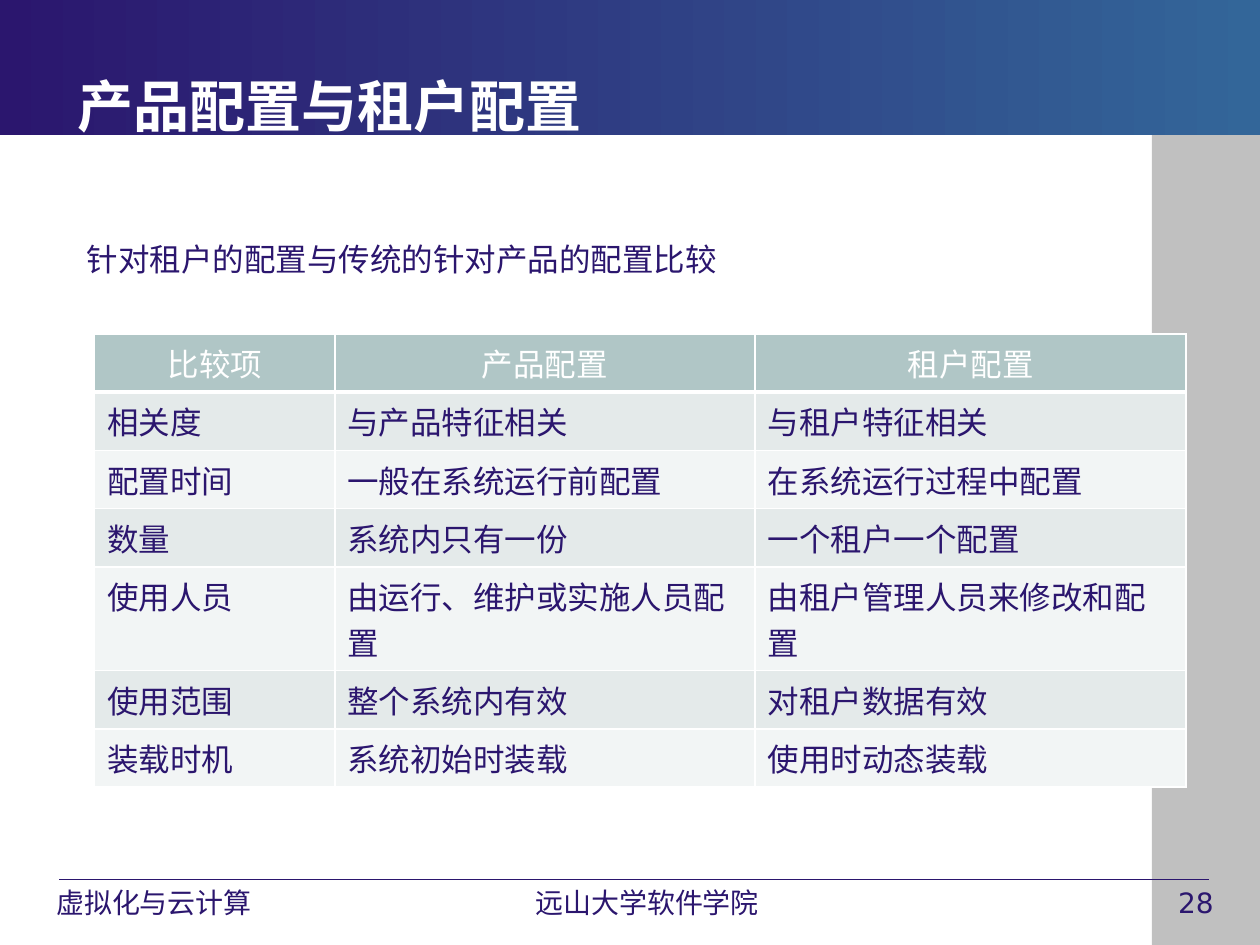
from lxml import etree
from pptx import Presentation
from pptx.dml.color import RGBColor
from pptx.enum import shapes, text
from pptx.oxml import ns
from pptx.util import Cm, Pt

INDIGO = RGBColor(0x2B, 0x16, 0x6E)
BLUE = RGBColor(0x33, 0x66, 0x99)
GRAY = RGBColor(0xC0, 0xC0, 0xC0)
WHITE = RGBColor(0xFF, 0xFF, 0xFF)
TEAL = RGBColor(0xB0, 0xC6, 0xC6)
BANDS = (RGBColor(0xE4, 0xEA, 0xEA), RGBColor(0xF2, 0xF5, 0xF5))

COMPARISON = [
    ("比较项", "产品配置", "租户配置"),
    ("相关度", "与产品特征相关", "与租户特征相关"),
    ("配置时间", "一般在系统运行前配置", "在系统运行过程中配置"),
    ("数量", "系统内只有一份", "一个租户一个配置"),
    ("使用人员", "由运行、维护或实施人员配置", "由租户管理人员来修改和配置"),
    ("使用范围", "整个系统内有效", "对租户数据有效"),
    ("装载时机", "系统初始时装载", "使用时动态装载"),
]
COLUMN_WIDTHS = (4.84, 8.47, 8.69)
ROW_HEIGHT = 1.17
FOOTERS = [
    ("虚拟化与云计算", 0.64, 4.93, text.PP_ALIGN.CENTER),
    ("远山大学软件学院", 10.19, 5.72, text.PP_ALIGN.CENTER),
    ("28", 23.5, 1.8, text.PP_ALIGN.LEFT),
]


def write(frame, words, size=18, font="Arial", color=INDIGO, bold=False,
          align=text.PP_ALIGN.LEFT):
    paragraph = frame.paragraphs[0]
    paragraph.alignment = align
    run = paragraph.add_run()
    run.text = words
    run.font.size = Pt(size)
    run.font.name = font
    run.font.color.rgb = color
    run.font.bold = bold


def add_label(slide, words, left, top, width, height, **style):
    frame = slide.shapes.add_textbox(Cm(left), Cm(top), Cm(width), Cm(height)).text_frame
    frame.word_wrap = True
    write(frame, words, **style)


def add_panel(slide, left, top, width, height):
    panel = slide.shapes.add_shape(shapes.MSO_SHAPE.RECTANGLE,
                                   Cm(left), Cm(top), Cm(width), Cm(height))
    panel.shadow.inherit = False
    panel.line.fill.background()
    return panel.fill


def add_backdrop(slide):
    sidebar = add_panel(slide, 23.22, 2.72, 2.18, 16.33)
    sidebar.solid()
    sidebar.fore_color.rgb = GRAY

    banner = add_panel(slide, 0, 0, 25.4, 2.72)
    banner.gradient()
    banner.gradient_angle = 0
    for stop, color in zip(banner.gradient_stops, (INDIGO, BLUE)):
        stop.color.rgb = color


def add_rule(slide, left, right, y):
    rule = slide.shapes.add_connector(shapes.MSO_CONNECTOR.STRAIGHT,
                                      Cm(left), Cm(y), Cm(right), Cm(y))
    rule.line.color.rgb = INDIGO
    rule.line.width = Pt(0.75)
    etree.SubElement(rule.element.spPr, ns.qn("a:effectLst"))


def set_title(slide, words):
    title = slide.shapes.title
    title.left, title.top, title.width, title.height = Cm(1.3), Cm(0.53), Cm(22.86), Cm(3.18)
    frame = title.text_frame
    frame.auto_size = text.MSO_AUTO_SIZE.NONE
    frame.vertical_anchor = text.MSO_ANCHOR.MIDDLE
    write(frame, words, size=32, font="DejaVu Sans", color=WHITE, bold=True)


def set_borders(cell, bottom):
    properties = cell._tc.get_or_add_tcPr()
    for side, width in (("L", 1), ("R", 1), ("T", 1), ("B", bottom)):
        border = etree.SubElement(properties, ns.qn(f"a:ln{side}"), w=str(Pt(width)))
        fill = etree.SubElement(border, ns.qn("a:solidFill"))
        etree.SubElement(fill, ns.qn("a:srgbClr"), val=str(WHITE))


def add_comparison(slide, left, top):
    table = slide.shapes.add_table(
        len(COMPARISON), len(COLUMN_WIDTHS), Cm(left), Cm(top),
        Cm(sum(COLUMN_WIDTHS)), Cm(ROW_HEIGHT * len(COMPARISON))).table
    for column, width in zip(table.columns, COLUMN_WIDTHS):
        column.width = Cm(width)
    for r, entries in enumerate(COMPARISON):
        header = r == 0
        for c, words in enumerate(entries):
            cell = table.cell(r, c)
            set_borders(cell, bottom=3 if header else 1)
            cell.fill.solid()
            cell.fill.fore_color.rgb = TEAL if header else BANDS[(r - 1) % 2]
            write(cell.text_frame, words, color=WHITE if header else INDIGO,
                  align=text.PP_ALIGN.CENTER if header else text.PP_ALIGN.LEFT)


def main():
    deck = Presentation()
    deck.slide_width, deck.slide_height = Cm(25.4), Cm(19.05)
    slide = deck.slides.add_slide(deck.slide_layouts.get_by_name("Title Only"))
    add_backdrop(slide)
    add_rule(slide, 1.19, 24.38, 17.73)
    for words, left, width, align in FOOTERS:
        add_label(slide, words, left, 17.73, width, 0.89,
                  size=16, font="DejaVu Sans", align=align)
    title = slide.shapes.title.element
    title.getparent().append(title)
    set_title(slide, "产品配置与租户配置")
    add_comparison(slide, 1.91, 6.73)
    add_label(slide, "针对租户的配置与传统的针对产品的配置比较", 1.5, 4.72, 16.61, 1.02)
    deck.save("out.pptx")


if __name__ == "__main__":
    main()
